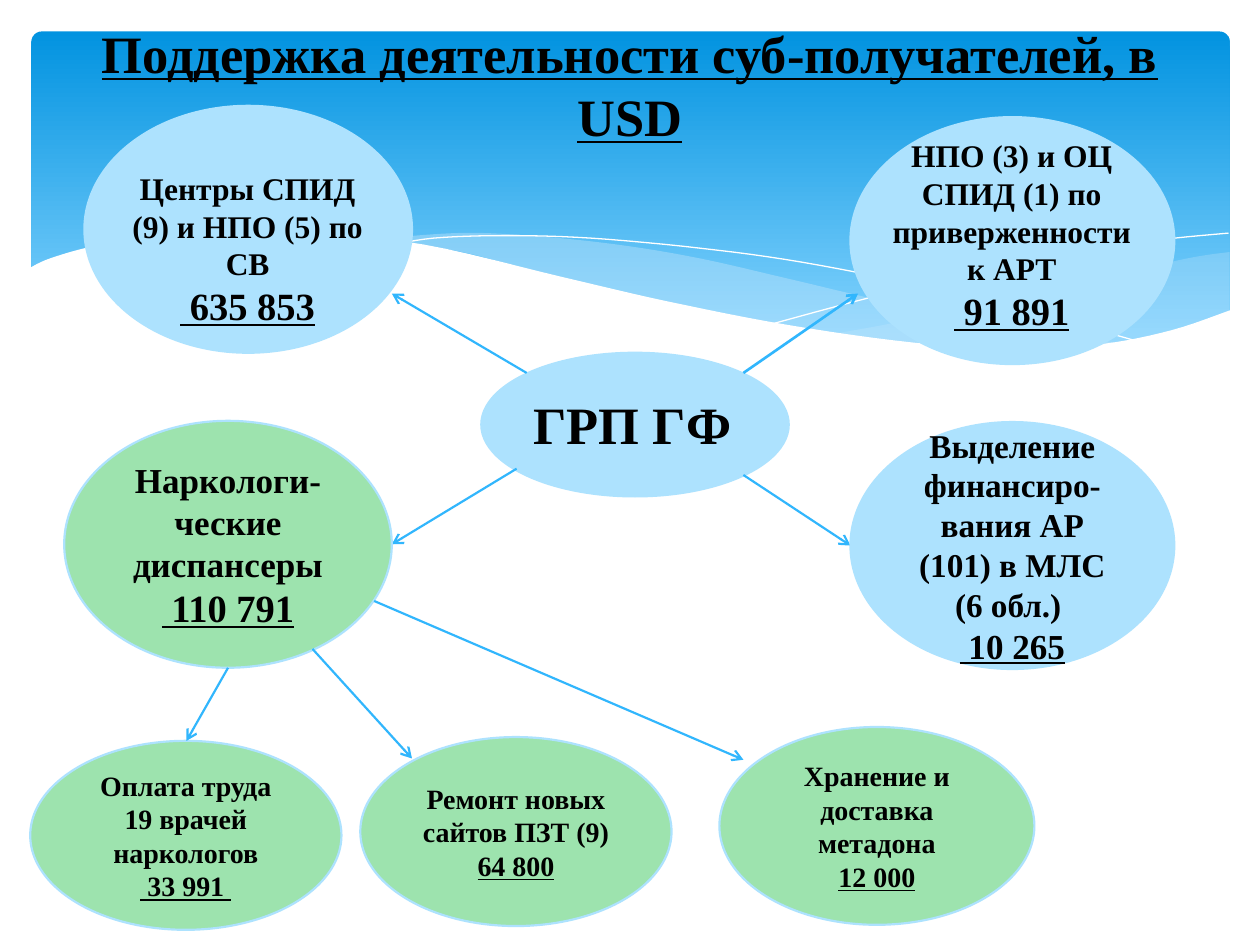
from collections import namedtuple
from lxml.etree import SubElement
from pptx import Presentation
from pptx.dml.color import RGBColor
from pptx.enum.shapes import MSO_CONNECTOR as Connector, MSO_SHAPE as Shape
from pptx.enum.text import MSO_ANCHOR as Anchor, PP_ALIGN as Align
from pptx.oxml.ns import qn
from pptx.util import Emu, Inches, Pt

COLUMNS, ROWS = 100, 75
WIDTH, HEIGHT = Inches(10), Inches(7.5)
SKY, MINT, ARROW, MIST = "ADE2FE", "9DE3AE", "31B6FD", "C6E7FC"
Box = namedtuple("Box", "left top width height")


def rgb(value):
    """Turn a hex string into a colour."""
    return RGBColor.from_string(value)


def point(box, x, y):
    """Place a grid point relative to a box."""
    return Emu(round((box.left + x) * WIDTH / COLUMNS)), Emu(round((box.top + y) * HEIGHT / ROWS))


def area(box, x, y, width, height):
    """Place a grid rectangle relative to a box."""
    return *point(box, x, y), *point(Box(0, 0, 0, 0), width, height)


def paint(shape, fill=None, line=None, weight=1.25, opacity=100):
    """Set fill, outline and opacity, and drop the shadow."""
    shape.shadow.inherit = False
    if fill:
        shape.fill.solid()
        shape.fill.fore_color.rgb = rgb(fill)
        if opacity < 100:
            tint = shape.fill._xPr.find(qn("a:solidFill"))[0]
            SubElement(tint, qn("a:alpha")).set("val", str(opacity * 1000))
    else:
        shape.fill.background()
    if line:
        shape.line.color.rgb = rgb(line)
        shape.line.width = Pt(weight)
    else:
        shape.line.fill.background()


def write(frame, lines, anchor=Anchor.TOP, font="Times New Roman", color="000000"):
    """Write centred bold lines given as (text, size, underlined)."""
    frame.word_wrap = True
    frame.vertical_anchor = anchor
    for index, (text, size, underlined) in enumerate(lines):
        paragraph = frame.add_paragraph() if index else frame.paragraphs[0]
        paragraph.alignment = Align.CENTER
        run = paragraph.add_run()
        run.text = text
        run.font.name, run.font.size = font, Pt(size)
        run.font.bold, run.font.underline = True, underlined
        run.font.color.rgb = rgb(color)


def label(slide, place, lines, **form):
    """Add a text box."""
    write(slide.shapes.add_textbox(*place).text_frame, lines, **form)


def oval(slide, place, fill, lines=()):
    """Add an ellipse with optional text."""
    shape = slide.shapes.add_shape(Shape.OVAL, *place)
    paint(shape, fill, SKY)
    write(shape.text_frame, lines, anchor=Anchor.MIDDLE)


def arrow(slide, box, start, end, weight=1.25):
    """Add an arrow between two grid points."""
    link = slide.shapes.add_connector(Connector.STRAIGHT, *point(box, *start), *point(box, *end))
    link.line.color.rgb = rgb(ARROW)
    link.line.width = Pt(weight)
    SubElement(link.line._get_or_add_ln(), qn("a:tailEnd")).set("type", "arrow")
    SubElement(link._element.spPr, qn("a:effectLst"))


def curve(knots, steps=6):
    """Sample a smooth Catmull-Rom curve through the knots."""
    padded = [knots[0], *knots, knots[-1]]
    samples = [knots[0]]
    for quad in zip(padded, padded[1:], padded[2:], padded[3:]):
        for step in range(1, steps + 1):
            t = step / steps
            samples.append(tuple(
                b + ((c - a) * t + (2 * a - 5 * b + 4 * c - d) * t ** 2
                     + (3 * b - a - 3 * c + d) * t ** 3) / 2
                for a, b, c, d in zip(*quad)))
    return samples


def outline(slide, box, points, closed=True, **look):
    """Draw a freeform through grid points."""
    start, *rest = [point(box, *spot) for spot in points]
    builder = slide.shapes.build_freeform(*start, scale=1.0)
    builder.add_line_segments(rest, close=closed)
    paint(builder.convert_to_shape(), **look)


def banner(slide, box):
    """Draw the gradient header with its waves and the title."""
    sky = slide.shapes.add_shape(Shape.ROUNDED_RECTANGLE, *area(box, 0.5, 0.5, 95.1, 27))
    paint(sky)
    sky.adjustments[0] = 0.03
    sky.fill.gradient()
    sky.fill.gradient_angle = 270
    for stop, (position, color) in zip(sky.fill.gradient_stops, ((0, "0293E0"), (0.9, "83D3FE"))):
        stop.position, stop.color.rgb = position, rgb(color)

    right_top = [(95.6, 18), (92.8, 18.4), (88.6, 19.3), (84.1, 20.3), (75.9, 22.2),
                 (68.6, 23.7), (64.1, 24.5)]
    right_base = [(64.1, 24.5), (71.2, 25.4), (78.3, 25.8), (83.4, 25.6), (87.7, 25),
                  (90.8, 24.3), (95.6, 22.7)]
    wave_top = [(87.3, 25.3), (78.7, 24), (68.6, 22), (60.9, 20.2), (53.5, 18.5),
                (46.9, 17.4), (40, 16.7), (34.1, 16.5), (26.6, 17.1)]
    wave_base = [(26.6, 17.1), (34.2, 17.9), (42.9, 20.2), (54.6, 22.8), (64.5, 24.6),
                 (72.8, 25.6), (79.8, 25.8), (87.3, 25.3)]
    for top, base, opacity in ((right_top, right_base, 29), (wave_top, wave_base, 40)):
        outline(slide, box, curve(top) + curve(base), fill=MIST, opacity=opacity)

    long_crest = [(28.9, 17.5), (32.4, 16.9), (38.1, 16.7), (44.9, 16.9), (53.6, 17.7),
                  (61.6, 18.8), (70.7, 20.6), (81.1, 23.1), (88.7, 25.2)]
    right_crest = [(59.3, 23.7), (67.5, 21.5), (75.6, 19.6), (84.6, 17.9), (90.4, 17), (95.5, 16.5)]
    for crest in (long_crest, right_crest):
        outline(slide, box, curve(crest), closed=False, line="FFFFFF", weight=0)

    shore = [(95.7, 22.6), (91, 24.2), (85.5, 25.3), (78.9, 25.7), (70.6, 25.2), (60.6, 23.8),
             (50.9, 21.9), (42.7, 20), (31.6, 17.4), (23, 16.6), (17.3, 16.4), (11.2, 16.6),
             (5.6, 17.5), (2, 18.5), (0.3, 19.3)]
    outline(slide, box, curve(shore) + [(0.3, box.height), (95.7, box.height)], fill="FFFFFF")
    label(slide, area(box, 3, 1, 90, 7.3),
          [("Поддержка деятельности суб-получателей, в USD", 30, True)], anchor=Anchor.MIDDLE)


def funding_map(slide, box):
    """Place the hub, its four recipients and the arrows to them."""
    oval(slide, area(box, 33.2, 20, 24.4, 11.4), SKY)
    label(slide, area(box, 33.8, 22.6, 22.8, 6.1), [("ГРП ГФ", 30, False)])
    for start, end, weight in (((54, 21.6), (63.1, 15.3), 1.5), ((36.8, 21.6), (26.1, 15.3), 1.25),
                               ((36, 29.2), (26.1, 35.2), 1.25), ((54, 29.7), (62.5, 35.3), 1.25)):
        arrow(slide, box, start, end, weight)

    dispensaries = [("Наркологи-ческие диспансеры", 20, False), (" 110 791", 22, True)]
    prisons = [("Выделение финансиро-вания АР (101) в МЛС (6 обл.) ", 19, False),
               (" 10 265", 20, True)]
    for x, y, width, fill, lines in ((1.7, 0.4, 26, SKY, ()), (0.1, 25.4, 26, MINT, dispensaries),
                                     (62.5, 1.3, 25.7, SKY, ()), (62.5, 25.5, 25.7, SKY, prisons)):
        oval(slide, area(box, x, y, width, 19.6), fill, lines)
    label(slide, area(box, 4.4, 4.9, 20.5, 13.8),
          [("Центры СПИД (9) и НПО (5) по СВ", 18, False), (" 635 853", 22, True)])
    label(slide, area(box, 64.6, 2.3, 21.4, 16.8),
          [("НПО (3) и ОЦ СПИД (1) по приверженности к АРТ", 18, False), (" 91 891", 22, True)])


def dispensary_costs(slide, box):
    """Place the three dispensary expenses and the arrows to them."""
    costs = (
        ((0.4, 11.8, 24.7, 15), "Оплата труда 19 врачей наркологов", " 33 991 ", (16.1, 6), (12.8, 11.8)),
        ((26.6, 11.5, 24.7, 15), "Ремонт новых сайтов ПЗТ (9)", "64 800", (22.8, 4.5), (30.7, 13.2)),
        ((55.1, 10.7, 25, 15.7), "Хранение и доставка метадона", "12 000", (27.7, 0.7), (57, 13.3)),
    )
    for place, purpose, amount, start, end in costs:
        oval(slide, area(box, *place), MINT, [(purpose, 16, False), (amount, 16, True)])
        arrow(slide, box, start, end)


def main():
    """Build the slide and save it."""
    deck = Presentation()
    deck.slide_width, deck.slide_height = WIDTH, HEIGHT
    slide = deck.slides.add_slide(deck.slide_layouts[6])
    banner(slide, Box(2, 2, 96, 30.9))
    funding_map(slide, Box(5, 8, 89, 45))
    dispensary_costs(slide, Box(2, 47, 80, 27))
    deck.save("out.pptx")


if __name__ == "__main__":
    main()
